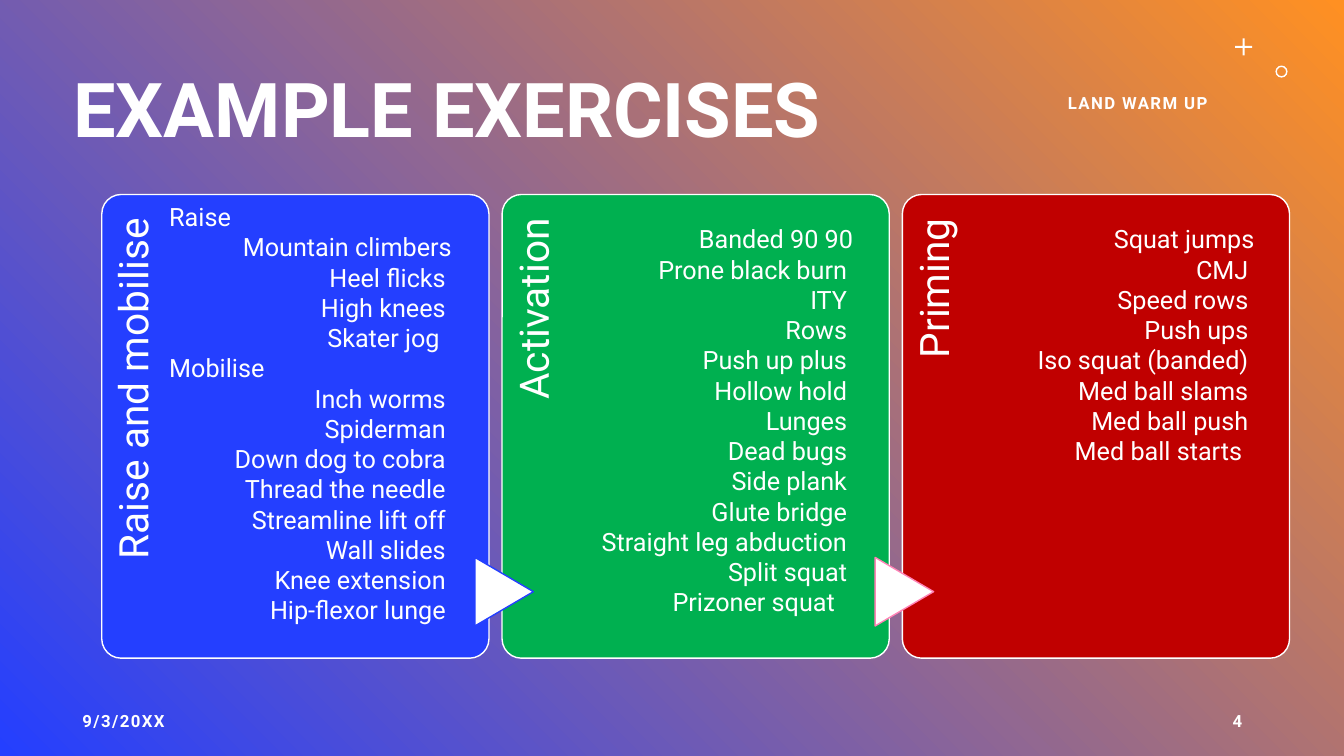
import dataclasses

import pptx
import pptx.dml.color
import pptx.enum.shapes
import pptx.enum.text
import pptx.util
from pptx.util import Inches

SHAPES = pptx.enum.shapes.MSO_SHAPE
ALIGN = pptx.enum.text.PP_ALIGN
ANCHOR = pptx.enum.text.MSO_ANCHOR


@dataclasses.dataclass(frozen=True)
class Theme:
    font: str = "Roboto"
    white: str = "FFFFFF"
    blue: str = "243FFF"
    orange: str = "FF9022"
    green: str = "00B050"
    red: str = "C00000"
    pink: str = "FF83B6"
    title_size: int = 54
    heading_size: int = 29
    list_size: int = 18
    label_size: int = 12


THEME = Theme()
CARD_LEFT, CARD_TOP, CARD_PITCH = 1.01, 1.93, 3.97
CARD_WIDTH, CARD_HEIGHT = 3.84, 4.6
SPACE_STEP = 0.06


@dataclasses.dataclass(frozen=True)
class Stage:
    heading: str
    color: str
    arrow_line: str
    list_box: tuple
    exercises: tuple


STAGES = (
    Stage("Raise and mobilise", THEME.blue, "", (1.58, 1.95, 3, 4.34), (
        ("Raise", None), ("Mountain climbers", 0), ("Heel flicks", 1),
        ("High knees", 1), ("Skater jog", 2), ("Mobilise", None),
        ("Inch worms", 1), ("Spiderman", 1), ("Down dog to cobra", 0),
        ("Thread the needle", 0), ("Streamline lift off", 0),
        ("Wall slides", 0), ("Knee extension", 0), ("Hip-flexor lunge", 1))),
    Stage("Activation", THEME.green, THEME.blue, (5.69, 2.17, 2.87, 4.04), (
        ("Banded 90 90", 0), ("Prone black burn", 1), ("ITY", 0), ("Rows", 1),
        ("Push up plus", 0), ("Hollow hold", 1), ("Lunges", 0),
        ("Dead bugs", 0), ("Side plank", 1), ("Glute bridge", 0),
        ("Straight leg abduction", 1), ("Split squat", 1),
        ("Prizoner squat", 3))),
    Stage("Priming", THEME.red, THEME.pink, (9.67, 2.17, 2.87, 2.52), (
        ("Squat jumps", 0), ("CMJ", 1), ("Speed rows", 1), ("Push ups", 1),
        ("Iso squat (banded)", 1), ("Med ball slams", 1),
        ("Med ball push", 0), ("Med ball starts", 2))),
)


def rgb(value):
    return pptx.dml.color.RGBColor.from_string(value)


def paint_background(page):
    fill = page.background.fill
    fill.gradient()
    fill.gradient_angle = 45
    for stop, color in zip(fill.gradient_stops, (THEME.blue, THEME.orange)):
        stop.color.rgb = rgb(color)
    fill.gradient_stops[0].position = 0
    fill.gradient_stops[1].position = 1


def add_figure(page, kind, box, fill, line=None, adjustment=None, rotation=0):
    figure = page.shapes.add_shape(kind, *map(Inches, box))
    figure.shadow.inherit = False
    figure.rotation = rotation
    figure.fill.solid()
    figure.fill.fore_color.rgb = rgb(fill)
    if line:
        figure.line.color.rgb = rgb(line)
        figure.line.width = pptx.util.Pt(1)
    else:
        figure.line.fill.background()
    if adjustment is not None:
        figure.adjustments[0] = adjustment


def add_text_box(page, box, anchor=ANCHOR.TOP):
    text_box = page.shapes.add_textbox(*map(Inches, box))
    text_box.text_frame.word_wrap = True
    text_box.text_frame.vertical_anchor = anchor
    return text_box


def add_span(para, text, size, bold=False, spacing=None):
    span = para.add_run()
    span.text = text
    span.font.name = THEME.font
    span.font.size = pptx.util.Pt(size)
    span.font.bold = bold
    span.font.color.rgb = rgb(THEME.white)
    if spacing:
        span.font._element.set("spc", str(spacing))


def add_title(page, text):
    frame = add_text_box(page, (0.63, 0.4, 11.78, 1.45), ANCHOR.MIDDLE).text_frame
    frame.paragraphs[0].line_spacing = 0.9
    add_span(frame.paragraphs[0], text, THEME.title_size, bold=True)


def add_label(page, text, box, align):
    para = add_text_box(page, box, ANCHOR.MIDDLE).text_frame.paragraphs[0]
    para.alignment = align
    add_span(para, text, THEME.label_size, bold=True, spacing=100)


def add_vertical_heading(page, text, card_left):
    box = add_text_box(page, (card_left - 1.5, 3.43, 3.78, 0.77))
    box.rotation = 270
    frame = box.text_frame
    frame.margin_left = frame.margin_bottom = 0
    frame.margin_top = Inches(0.11)
    frame.margin_right = Inches(0.24)
    para = frame.paragraphs[0]
    para.alignment = ALIGN.RIGHT
    para.line_spacing = 0.9
    add_span(para, text, THEME.heading_size)


def add_exercise_list(page, stage):
    frame = add_text_box(page, stage.list_box).text_frame
    frame.auto_size = pptx.enum.text.MSO_AUTO_SIZE.SHAPE_TO_FIT_TEXT
    for index, (name, indent_steps) in enumerate(stage.exercises):
        para = frame.add_paragraph() if index else frame.paragraphs[0]
        if indent_steps is not None:
            para.alignment = ALIGN.RIGHT
        if indent_steps:
            right_margin = Inches(SPACE_STEP * indent_steps)
            para._p.get_or_add_pPr().set("marR", str(int(right_margin)))
        add_span(para, name, THEME.list_size)


def add_stage_card(page, stage, left):
    add_figure(page, SHAPES.ROUNDED_RECTANGLE,
               (left, CARD_TOP, CARD_WIDTH, CARD_HEIGHT),
               stage.color, THEME.white, 0.05)
    add_vertical_heading(page, stage.heading, left)
    if stage.arrow_line:
        add_figure(page, SHAPES.FLOWCHART_EXTRACT,
                   (left - 0.32, 5.58, 0.68, 0.58),
                   THEME.white, stage.arrow_line, rotation=90)


def main():
    deck = pptx.Presentation()
    deck.slide_width, deck.slide_height = Inches(13.33), Inches(7.5)
    page = deck.slides.add_slide(deck.slide_layouts[6])
    paint_background(page)
    add_figure(page, SHAPES.CROSS, (12.25, 0.38, 0.17, 0.17), THEME.white,
               adjustment=0.44)
    add_figure(page, SHAPES.DONUT, (12.65, 0.65, 0.12, 0.12), THEME.white,
               adjustment=0.12)
    add_title(page, "EXAMPLE EXERCISES")
    add_label(page, "LAND WARM UP", (9.3, 0.82, 3.97, 0.4), ALIGN.CENTER)
    for index, stage in enumerate(STAGES):
        add_stage_card(page, stage, CARD_LEFT + index * CARD_PITCH)
    add_label(page, "9/3/20XX", (0.72, 6.95, 3, 0.4), ALIGN.LEFT)
    add_label(page, "4", (9.42, 6.95, 3, 0.4), ALIGN.RIGHT)
    for stage in STAGES:
        add_exercise_list(page, stage)
    deck.save("out.pptx")


if __name__ == "__main__":
    main()
